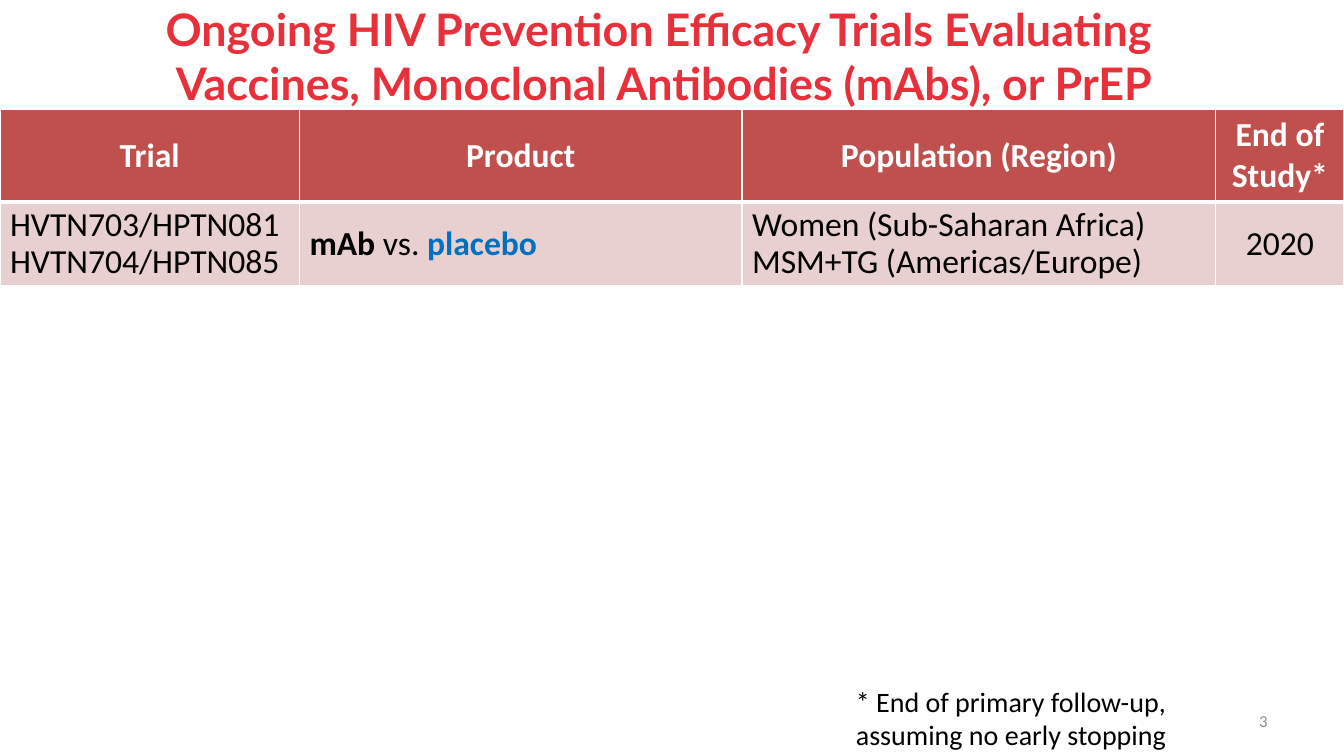
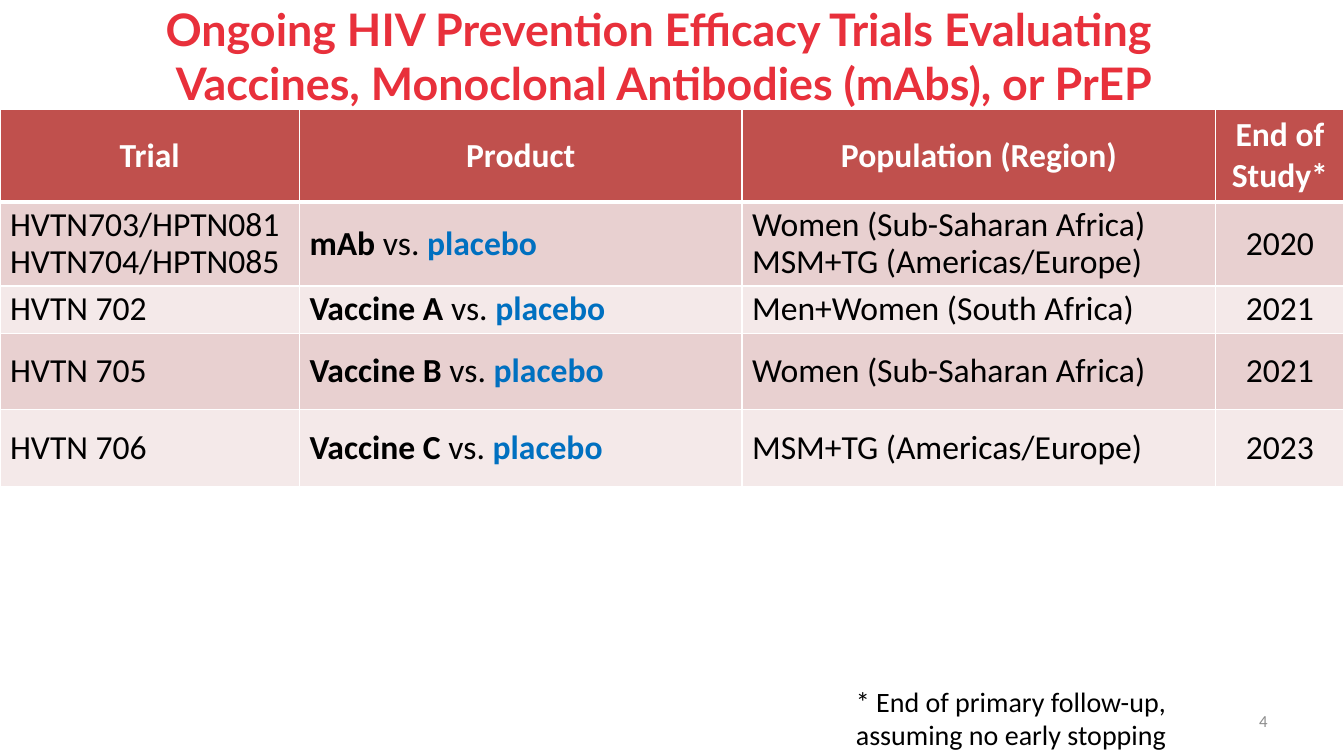
from lxml.etree import SubElement
from pptx import Presentation
from pptx.dml.color import RGBColor
from pptx.enum.text import MSO_ANCHOR as Anchor, MSO_AUTO_SIZE as AutoSize, PP_ALIGN as Align
from pptx.oxml.ns import qn
from pptx.util import Emu, Pt

EMU_PER_PX = 9144
WHITE, BLACK, GREY = "FFFFFF", "000000", "8C8C8C"
TITLE_RED, HEADER_RED, PLACEBO_BLUE = "E8303B", "C0504D", "0070C0"
BANDS = ("E8D0D0", "F4E9E9")
TITLE_LINES = (
    "Ongoing HIV Prevention Efficacy Trials Evaluating ",
    "Vaccines, Monoclonal Antibodies (mAbs), or PrEP",
)
FOOTNOTE = ("* End of primary follow-up,", "assuming no early stopping")
HEADINGS = ("Trial", "Product", "Population (Region)", "End of Study*")
COLUMN_WIDTHS = (297, 439, 470, 127)
HEADER_HEIGHT = 91
TRIALS = (
    (83, ("HVTN703/HPTN081", "HVTN704/HPTN085"), "mAb",
     ("Women (Sub-Saharan Africa)", "MSM+TG (Americas/Europe)"), "2020"),
    (47, ("HVTN 702",), "Vaccine A", ("Men+Women (South Africa)",), "2021"),
    (76, ("HVTN 705",), "Vaccine B", ("Women (Sub-Saharan Africa)",), "2021"),
    (76, ("HVTN 706",), "Vaccine C", ("MSM+TG (Americas/Europe)",), "2023"),
)


def px(*lengths):
    """Turn px lengths into EMU."""
    return [Emu(length * EMU_PER_PX) for length in lengths]


def colour(hex_string):
    """Turn a hex string into a colour."""
    return RGBColor.from_string(hex_string)


def add_run(paragraph, text, size, hex_string, bold=False, font="Calibri"):
    """Append one formatted run to a paragraph."""
    run = paragraph.add_run()
    run.text = text
    run.font.name, run.font.size, run.font.bold = font, Pt(size), bold
    run.font.color.rgb = colour(hex_string)


def paragraphs_for(frame, count):
    """Yield the first paragraph of a frame, then new ones up to count."""
    yield frame.paragraphs[0]
    for _ in range(count - 1):
        yield frame.add_paragraph()


def set_borders(cell, top=1, bottom=1):
    """Give a cell white borders, with widths in points."""
    properties = cell._tc.get_or_add_tcPr()
    for side, width in (("L", 1), ("R", 1), ("T", top), ("B", bottom)):
        border = SubElement(properties, qn(f"a:ln{side}"), w=str(Pt(width)))
        fill = SubElement(border, qn("a:solidFill"))
        SubElement(fill, qn("a:srgbClr"), val=WHITE)


def fill_cell(cell, lines, fill, size=24, align=Align.LEFT, spacing=None, **borders):
    """Write lines of (text, colour, bold) runs into a filled, bordered cell."""
    set_borders(cell, **borders)
    cell.fill.solid()
    cell.fill.fore_color.rgb = colour(fill)
    cell.vertical_anchor = Anchor.MIDDLE
    for paragraph, runs in zip(paragraphs_for(cell.text_frame, len(lines)), lines):
        paragraph.alignment, paragraph.line_spacing = align, spacing
        for text, hex_string, bold in runs:
            add_run(paragraph, text, size, hex_string, bold)


def plain(lines):
    """Turn strings into lines of one black run each."""
    return [[(line, BLACK, False)] for line in lines]


def add_title(slide):
    """Place and write the title."""
    title = slide.shapes.title
    title.left, title.top, title.width, title.height = px(59, 20, 1200, 71)
    frame = title.text_frame
    frame.auto_size, frame.vertical_anchor = AutoSize.NONE, Anchor.MIDDLE
    heading = frame.paragraphs[0]
    heading.alignment = Align.CENTER
    for index, line in enumerate(TITLE_LINES):
        if index:
            heading.add_line_break()
        add_run(heading, line, 32, TITLE_RED, True, "Lato")


def add_trial_table(slide, trials):
    """Add the table with a header and one row per trial."""
    heights = [HEADER_HEIGHT] + [trial[0] for trial in trials]
    table = slide.shapes.add_table(
        len(heights), len(HEADINGS), *px(0, 109, sum(COLUMN_WIDTHS), sum(heights))
    ).table
    for column, width in zip(table.columns, px(*COLUMN_WIDTHS)):
        column.width = width
    for row, height in zip(table.rows, px(*heights)):
        row.height = height
    for cell, heading in zip(table.rows[0].cells, HEADINGS):
        fill_cell(cell, [[(heading, WHITE, True)]], HEADER_RED, align=Align.CENTER, bottom=3)
    for index, (_, names, product, populations, year) in enumerate(trials):
        comparison = [(f"{product} ", BLACK, True), ("vs. ", BLACK, False),
                      ("placebo", PLACEBO_BLUE, True)]
        contents = (plain(names), [comparison], plain(populations), plain([year]))
        aligns = (Align.LEFT, Align.LEFT, Align.LEFT, Align.CENTER)
        for cell, lines, align in zip(table.rows[index + 1].cells, contents, aligns):
            fill_cell(cell, lines, BANDS[index % 2], align=align, spacing=0.9,
                      top=1 if index else 3)


def add_note(slide, box, lines, size, hex_string, align=Align.LEFT, anchor=Anchor.TOP):
    """Add a text box with one paragraph per line."""
    frame = slide.shapes.add_textbox(*px(*box)).text_frame
    frame.word_wrap, frame.vertical_anchor = True, anchor
    for paragraph, line in zip(paragraphs_for(frame, len(lines)), lines):
        paragraph.alignment = align
        add_run(paragraph, line, size, hex_string)


def add_trial_slide(deck, number, trials):
    """Add one slide listing the given trials."""
    slide = deck.slides.add_slide(deck.slide_layouts[5])
    add_title(slide)
    add_trial_table(slide, trials)
    add_note(slide, (839, 674, 337, 77), FOOTNOTE, 20, BLACK)
    add_note(slide, (956, 695, 311, 40), [str(number)], 12, GREY, Align.RIGHT, Anchor.MIDDLE)


def main():
    """Build and save the deck."""
    deck = Presentation()
    deck.slide_width, deck.slide_height = px(1333, 750)
    add_trial_slide(deck, 3, TRIALS[:1])
    add_trial_slide(deck, 4, TRIALS)
    deck.save("out.pptx")


if __name__ == "__main__":
    main()
